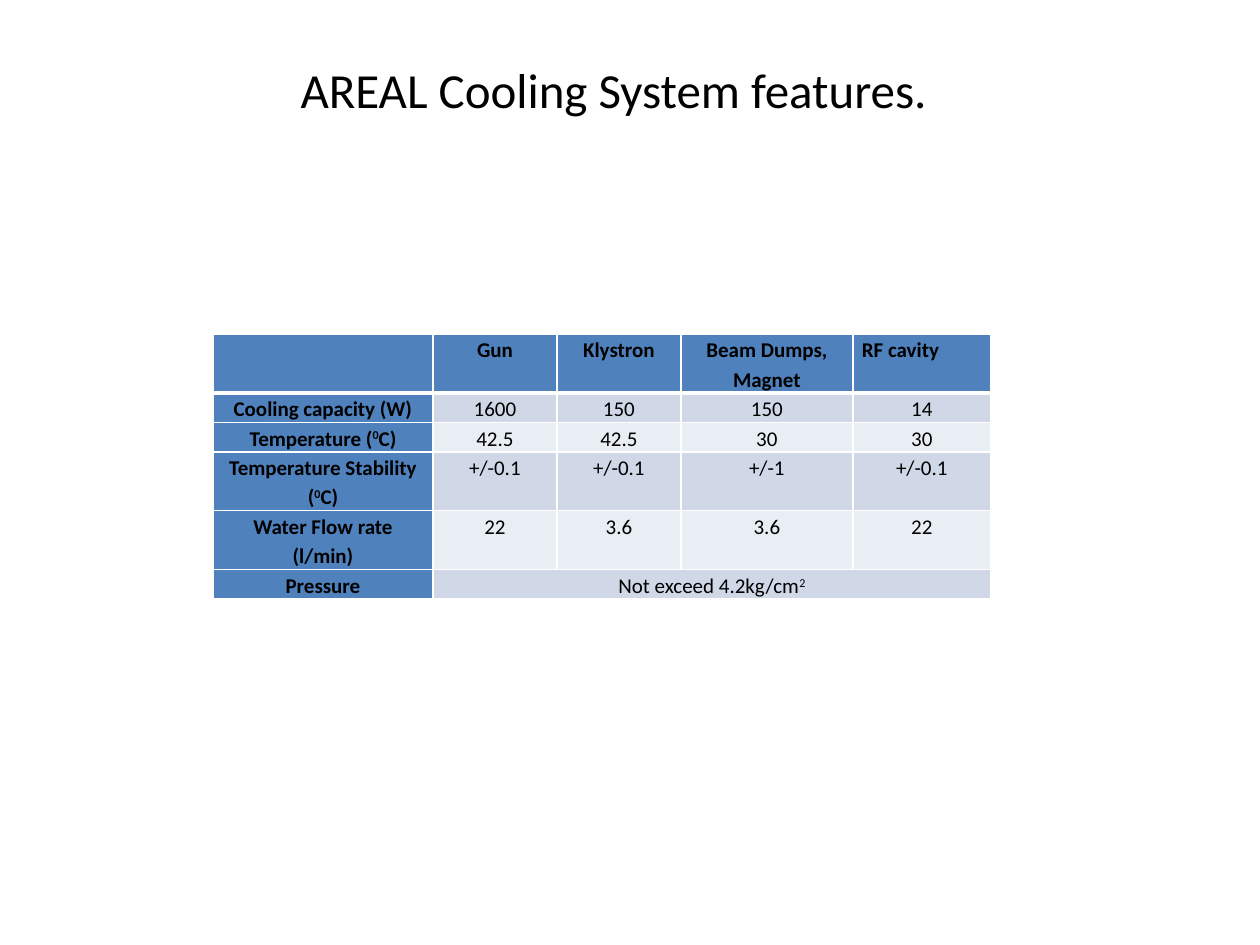
"""Build the AREAL cooling system slide."""
from dataclasses import dataclass

from lxml.etree import SubElement as Sub
from pptx import Presentation
from pptx.dml.color import RGBColor
from pptx.enum.text import MSO_ANCHOR as Anchor, PP_ALIGN as Align
from pptx.oxml.ns import qn
from pptx.util import Emu, Pt

DPI = 126
FONT = "Calibri"
BLACK = RGBColor(0, 0, 0)
WHITE = RGBColor(255, 255, 255)
BLUE = RGBColor(0x4F, 0x81, 0xBD)
BANDS = (RGBColor(0xE9, 0xED, 0xF4), RGBColor(0xD0, 0xD8, 0xE8))
WIDTHS = (220, 124, 124, 172, 138)


@dataclass(frozen=True)
class Row:
    """A table row, with superscripts set between carets."""
    high: int
    cells: tuple[str, ...]


ROWS = (
    Row(58, ("", "Gun", "Klystron", "Beam Dumps, Magnet", "RF cavity")),
    Row(29, ("Cooling capacity (W)", "1600", "150", "150", "14")),
    Row(29, ("Temperature (^0^C)", "42.5", "42.5", "30", "30")),
    Row(58, ("Temperature Stability (^0^C)", "+/-0.1", "+/-0.1", "+/-1", "+/-0.1")),
    Row(58, ("Water Flow rate (l/min)", "22", "3.6", "3.6", "22")),
    Row(29, ("Pressure", "Not exceed 4.2kg/cm^2^")),
)


def px(num: int) -> Emu:
    """Turn pixels into EMU."""
    return Emu(round(num * 914400 / DPI))


def edge(cell, side: str, wide: float) -> None:
    """Draw one white border of a cell."""
    line = Sub(cell._tc.get_or_add_tcPr(), qn(f"a:ln{side}"), w=str(Pt(wide)))
    Sub(Sub(line, qn("a:solidFill")), qn("a:srgbClr"), val=str(WHITE))


def write(cell, text: str, bold: bool, align: Align) -> None:
    """Fill a cell with text and raise its superscripts."""
    para = cell.text_frame.paragraphs[0]
    para.alignment, para.line_spacing = align, 1.15
    para.font.size = Pt(12)
    for spot, part in enumerate(text.split("^")):
        if not part:
            continue
        run = para.add_run()
        run.text = part
        run.font.name, run.font.size, run.font.bold = FONT, Pt(12), bold
        run.font.color.rgb = BLACK
        if spot % 2:
            run.font._element.set("baseline", "30000")


def style(cell, row: int, col: int) -> None:
    """Set the margins, borders and fill of a cell."""
    cell.margin_left = cell.margin_right = px(9)
    cell.margin_top = cell.margin_bottom = 0
    cell.vertical_anchor = Anchor.TOP
    for side, wide in (("L", 1), ("R", 1), ("T", 3 if row == 1 else 1),
                       ("B", 3 if row == 0 else 1)):
        edge(cell, side, wide)
    cell.fill.solid()
    cell.fill.fore_color.rgb = BLUE if 0 in (row, col) else BANDS[row % 2]


def add_grid(slide) -> None:
    """Add the table of cooling features."""
    high = sum(row.high for row in ROWS)
    grid = slide.shapes.add_table(len(ROWS), len(WIDTHS), px(213), px(334),
                                  px(sum(WIDTHS)), px(high)).table
    grid.first_row = grid.horz_banding = False
    for col, wide in zip(grid.columns, WIDTHS):
        col.width = px(wide)
    last = len(WIDTHS) - 1
    for r, row in enumerate(ROWS):
        grid.rows[r].height = px(row.high)
        for c in range(len(WIDTHS)):
            style(grid.cell(r, c), r, c)
        for c, text in enumerate(row.cells):
            align = Align.LEFT if (r, c) == (0, last) else Align.CENTER
            write(grid.cell(r, c), text, 0 in (r, c), align)
    end = len(ROWS) - 1
    grid.cell(end, 1).merge(grid.cell(end, last))


def add_title(slide) -> None:
    """Place and format the slide title."""
    title = slide.shapes.title
    title.left, title.top, title.width, title.height = map(px, (136, 53, 955, 72))
    frame = title.text_frame
    frame.text = "AREAL Cooling System features."
    frame.vertical_anchor = Anchor.MIDDLE
    para = frame.paragraphs[0]
    para.alignment = Align.CENTER
    font = para.runs[0].font
    font.name, font.size = FONT, Pt(28)
    font.color.rgb = BLACK


def main() -> None:
    """Build and save the deck."""
    deck = Presentation()
    deck.slide_width, deck.slide_height = px(1260), px(945)
    slide = deck.slides.add_slide(deck.slide_layouts[5])
    add_title(slide)
    add_grid(slide)
    deck.save("out.pptx")


if __name__ == "__main__":
    main()
